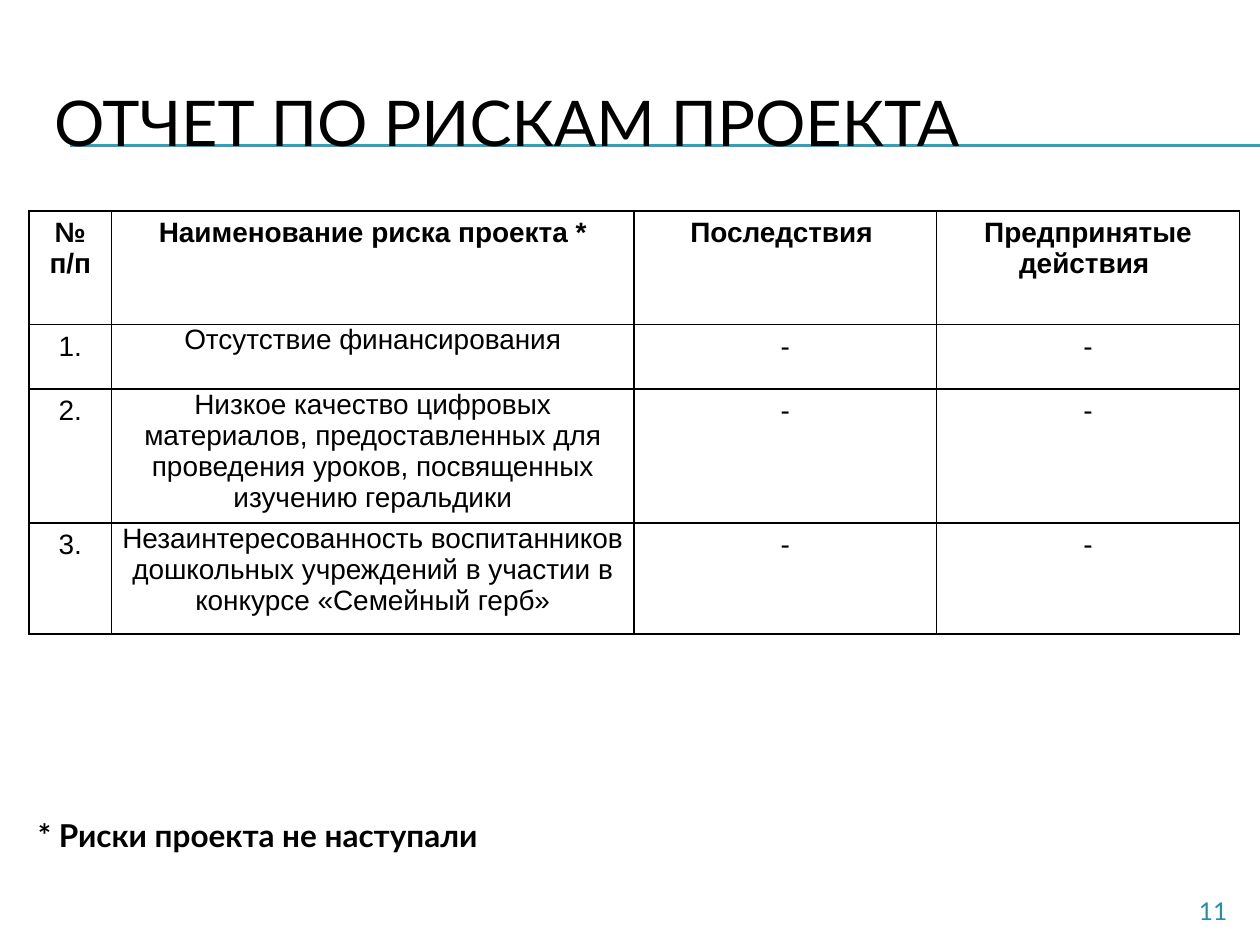
from dataclasses import dataclass

from lxml.etree import SubElement
from pptx import Presentation
from pptx.dml.color import RGBColor
from pptx.enum.text import MSO_ANCHOR, PP_ALIGN
from pptx.enum.shapes import MSO_CONNECTOR
from pptx.oxml.ns import qn
from pptx.util import Pt


@dataclass(frozen=True)
class Theme:
    text: str = "000000"
    rule: str = "2DA2BF"
    number: str = "268EA8"
    heading_font: str = "Lato"
    table_font: str = "Arial"
    title_size: int = 36
    note_size: int = 18
    table_size: int = 16
    number_size: int = 14


THEME = Theme()

RISKS = [
    "Отсутствие финансирования",
    "Низкое качество цифровых материалов, предоставленных для проведения "
    "уроков, посвященных изучению геральдики",
    "Незаинтересованность воспитанников дошкольных учреждений в участии "
    "в конкурсе «Семейный герб»",
]
HEADINGS = ["№ п/п", "Наименование риска проекта *", "Последствия ", "Предпринятые действия "]
RISK_COLUMN = 1


def style_text(paragraph, font_name, size, color=THEME.text, bold=False, align=PP_ALIGN.LEFT):
    paragraph.alignment = align
    font = paragraph.font
    font.name = font_name
    font.size = Pt(size)
    font.bold = bold
    font.color.rgb = RGBColor.from_string(color)


def add_rule(slide, left, right, y):
    rule = slide.shapes.add_connector(MSO_CONNECTOR.STRAIGHT, Pt(left), Pt(y), Pt(right), Pt(y))
    rule.line.color.rgb = RGBColor.from_string(THEME.rule)
    rule.line.width = Pt(0.75)
    SubElement(rule._element.spPr, qn("a:effectLst"))


def add_text(slide, box, text, size, color=THEME.text, align=PP_ALIGN.LEFT, anchor=MSO_ANCHOR.TOP):
    frame = slide.shapes.add_textbox(*map(Pt, box)).text_frame
    frame.word_wrap = True
    frame.vertical_anchor = anchor
    frame.text = text
    style_text(frame.paragraphs[0], THEME.heading_font, size, color, align=align)


def set_borders(cell, color):
    properties = cell._tc.get_or_add_tcPr()
    for side in ("lnL", "lnR", "lnT", "lnB"):
        border = SubElement(properties, qn(f"a:{side}"), w=str(Pt(1)))
        if color:
            fill = SubElement(border, qn("a:solidFill"))
            SubElement(fill, qn("a:srgbClr"), val=color)
        else:
            SubElement(border, qn("a:noFill"))


def add_plain_table(slide, left, top, widths, heights, rows, border=None):
    table = slide.shapes.add_table(
        len(heights), len(widths), Pt(left), Pt(top), Pt(sum(widths)), Pt(sum(heights))
    ).table
    table.first_row = False
    table.horz_banding = False
    for column, width in zip(table.columns, widths):
        column.width = Pt(width)
    for row, height, texts in zip(table.rows, heights, rows):
        row.height = Pt(height)
        for cell, text in zip(row.cells, texts):
            cell.text = text
            set_borders(cell, border)
            cell.fill.background()
    return table


def add_risk_table(slide):
    rows = [HEADINGS] + [[f"{number}.", risk, "-", "-"] for number, risk in enumerate(RISKS, 1)]
    table = add_plain_table(
        slide, 16.5, 120.7, [47.3, 298.5, 173, 173], [64.8, 36.7, 57.6, 63.4], rows, THEME.text
    )
    for index, row in enumerate(table.rows):
        for cell in row.cells:
            style_text(cell.text_frame.paragraphs[0], THEME.table_font, THEME.table_size,
                       bold=index == 0, align=PP_ALIGN.CENTER)
        if index > 0:
            risk = row.cells[RISK_COLUMN]
            risk.margin_left = risk.margin_right = Pt(1.5)
            risk.margin_top = risk.margin_bottom = Pt(0)


def add_footnote(slide):
    table = add_plain_table(slide, 14.4, 463, [694], [29.5], [["* Риски проекта не наступали"]])
    style_text(table.cell(0, 0).text_frame.paragraphs[0], THEME.heading_font,
               THEME.note_size, bold=True)


def main():
    presentation = Presentation()
    presentation.slide_width = Pt(720)
    presentation.slide_height = Pt(540)
    slide = presentation.slides.add_slide(presentation.slide_layouts[6])
    for y in (82.8, 83.5):
        add_rule(slide, 40.3, 720, y)
    add_text(slide, (23.8, 36, 684, 66.2), "ОТЧЕТ ПО РИСКАМ ПРОЕКТА", THEME.title_size,
             anchor=MSO_ANCHOR.MIDDLE)
    add_risk_table(slide)
    add_text(slide, (14.4, 508.3, 694, 20.9), "11", THEME.number_size, THEME.number,
             align=PP_ALIGN.RIGHT)
    add_footnote(slide)
    presentation.save("out.pptx")


if __name__ == "__main__":
    main()
